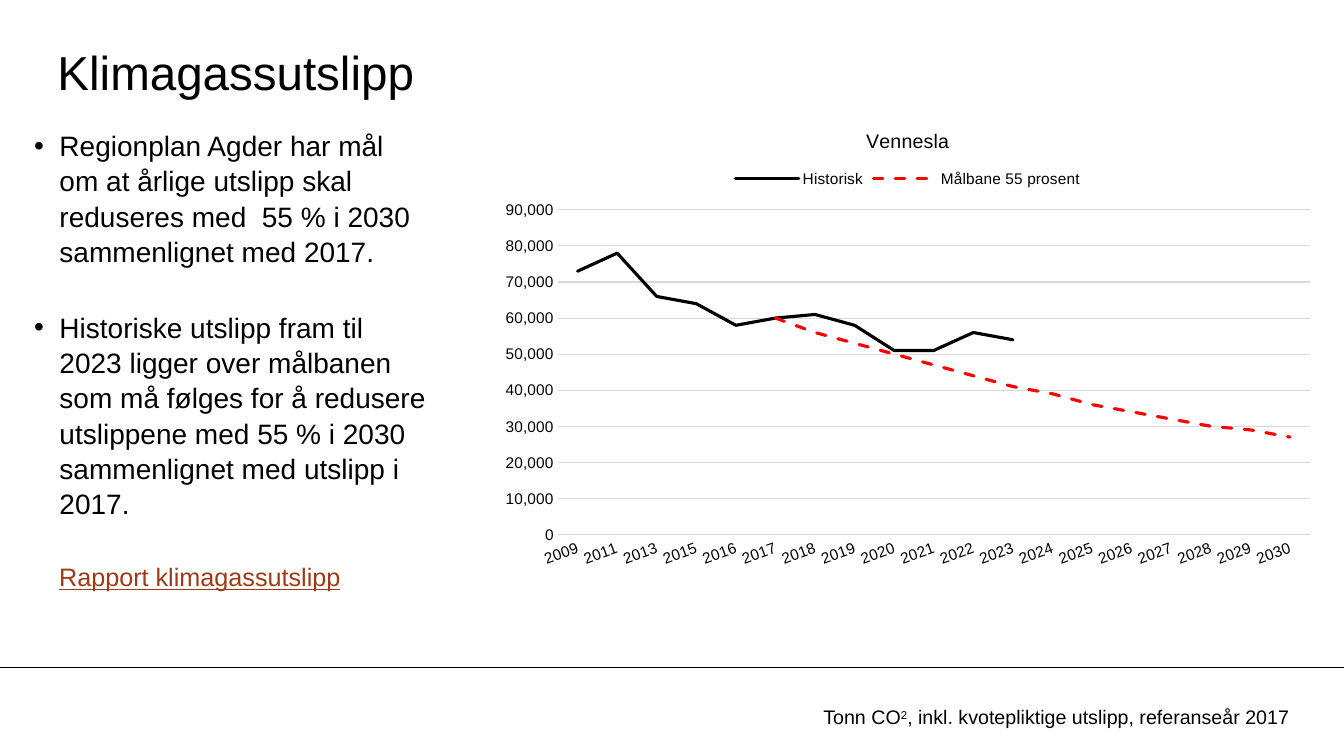
from lxml import etree
from pptx import Presentation
from pptx.chart.data import CategoryChartData
from pptx.dml.color import RGBColor
from pptx.enum.chart import XL_CHART_TYPE as CT, XL_LEGEND_POSITION as LP, XL_TICK_MARK as TM
from pptx.enum.dml import MSO_LINE
from pptx.enum.shapes import MSO_CONNECTOR
from pptx.enum.text import MSO_ANCHOR
from pptx.oxml.ns import qn
from pptx.util import Cm, Pt

BLACK, RED, GREY, LINK = "000000", "FF0000", "D9D9D9", "9F3A14"


def rgb(value):
    return RGBColor.from_string(value)


class Deck:
    """Holds the style and the current slide, and adds elements to it."""

    def __init__(self, width, height, font="Arial"):
        self.prs = Presentation()
        self.prs.slide_width, self.prs.slide_height = Cm(width), Cm(height)
        self.s = self.prs.slides.add_slide(self.prs.slide_layouts[6])
        self.font = font

    def style(self, font, size, color=BLACK):
        font.name, font.size = self.font, Pt(size)
        font.color.rgb = rgb(color)

    def frame(self, box, inset=None, anchor=MSO_ANCHOR.TOP):
        tf = self.s.shapes.add_textbox(*map(Cm, box)).text_frame
        tf.word_wrap, tf.vertical_anchor = True, anchor
        if inset is not None:
            tf.margin_left = tf.margin_right = Cm(inset)
            tf.margin_top = tf.margin_bottom = Cm(inset)
        return tf

    def run(self, p, text, size, color=BLACK):
        r = p.add_run()
        r.text = text
        self.style(r.font, size, color)
        return r

    def bullets(self, box, items, size, gap):
        tf = self.frame(box, 0)
        for i, item in enumerate(items):
            p = tf.add_paragraph() if i else tf.paragraphs[0]
            pPr = p._p.get_or_add_pPr()
            pPr.set("marL", str(Cm(0.64)))
            pPr.set("indent", str(-Cm(0.64)))
            etree.SubElement(pPr, qn("a:buFont")).set("typeface", self.font)
            etree.SubElement(pPr, qn("a:buChar")).set("char", "•")
            p.line_spacing = 1.05
            p.space_before = Pt(gap if i else 0)
            self.run(p, item, size)

    def line(self, x1, y1, x2, y2, width):
        c = self.s.shapes.add_connector(MSO_CONNECTOR.STRAIGHT, *map(Cm, (x1, y1, x2, y2)))
        c.line.color.rgb, c.line.width = rgb(BLACK), Pt(width)
        etree.SubElement(c._element.spPr, qn("a:effectLst"))

    def line_chart(self, box, title, cats, series):
        data = CategoryChartData(number_format="#,##0")
        data.categories = cats
        for name, values, *_ in series:
            data.add_series(name, values)
        chart = self.s.shapes.add_chart(CT.LINE, *map(Cm, box), data).chart
        self.style(chart.font, 10)
        chart.has_title = True
        r = self.run(chart.chart_title.text_frame.paragraphs[0], title, 14)
        r.font.bold = False
        chart.chart_title.include_in_layout = False
        chart.has_legend = True
        chart.legend.position, chart.legend.include_in_layout = LP.TOP, False
        self.style(chart.legend.font, 11)
        chart.plots[0].vary_by_categories = False

        x, y = chart.category_axis, chart.value_axis
        for axis, code in ((x, "0"), (y, "#,##0")):
            axis.major_tick_mark = axis.minor_tick_mark = TM.NONE
            axis.tick_labels.number_format = code
            axis.tick_labels.number_format_is_linked = False
            self.style(axis.tick_labels.font, 11)
        x._element.find(qn("c:txPr")).find(qn("a:bodyPr")).set("rot", "-1200000")
        y.minimum_scale, y.maximum_scale, y.major_unit = 0, 90000, 10000
        y.format.line.fill.background()
        for line in (x.format.line, y.major_gridlines.format.line):
            line.color.rgb, line.width = rgb(GREY), Pt(0.75)

        for ser, (_, _, color, dash) in zip(chart.plots[0].series, series):
            ser.smooth = False
            line = ser.format.line
            line.color.rgb, line.width, line.dash_style = rgb(color), Pt(2.25), dash
            ser._element.spPr.find(qn("a:ln")).set("cap", "rnd")


def main():
    deck = Deck(33.87, 19.05)
    deck.line(0, 16.81, 33.87, 16.81, 0.75)

    tf = deck.frame((1.45, 0.86, 28.19, 1.9), 0, MSO_ANCHOR.MIDDLE)
    deck.run(tf.paragraphs[0], "Klimagassutslipp", 34)

    deck.bullets((0.86, 3.2, 9.88, 9.73), [
        "Regionplan Agder har mål om at årlige utslipp skal reduseres med  55 % i 2030 "
        "sammenlignet med 2017.",
        "Historiske utslipp fram til 2023 ligger over målbanen som må følges for å redusere "
        "utslippene med 55 % i 2030 sammenlignet med utslipp i 2017.",
    ], 20, 29)

    p = deck.frame((20.5, 17.65, 12.93, 0.86)).paragraphs[0]
    deck.run(p, "Tonn CO", 14)
    r = deck.run(p, "2", 14)
    r.font._element.set("baseline", "30000")
    deck.run(p, ", inkl. kvotepliktige utslipp, referanseår 2017", 14)

    tf = deck.frame((1.24, 14.02, 8.03, 1.02))
    r = deck.run(tf.paragraphs[0], "Rapport klimagassutslipp", 18, LINK)
    r.font.underline = True

    years = [2009, 2011, 2013, *range(2015, 2031)]
    history = [73000, 78000, 66000, 64000, 58000, 60000, 61000, 58000, 51000, 51000, 56000, 54000]
    target = [60000, 56000, 53000, 50000, 47000, 44000, 41000, 39000, 36000, 34000, 32000,
              30000, 29000, 27000]
    deck.line_chart((12.32, 2.77, 21.11, 11.76), "Vennesla", [str(year) for year in years], [
        ("Historisk", history + [None] * (len(years) - len(history)), BLACK, MSO_LINE.SOLID),
        ("Målbane 55 prosent", [None] * (len(years) - len(target)) + target, RED, MSO_LINE.DASH),
    ])
    deck.prs.save("out.pptx")


if __name__ == "__main__":
    main()
